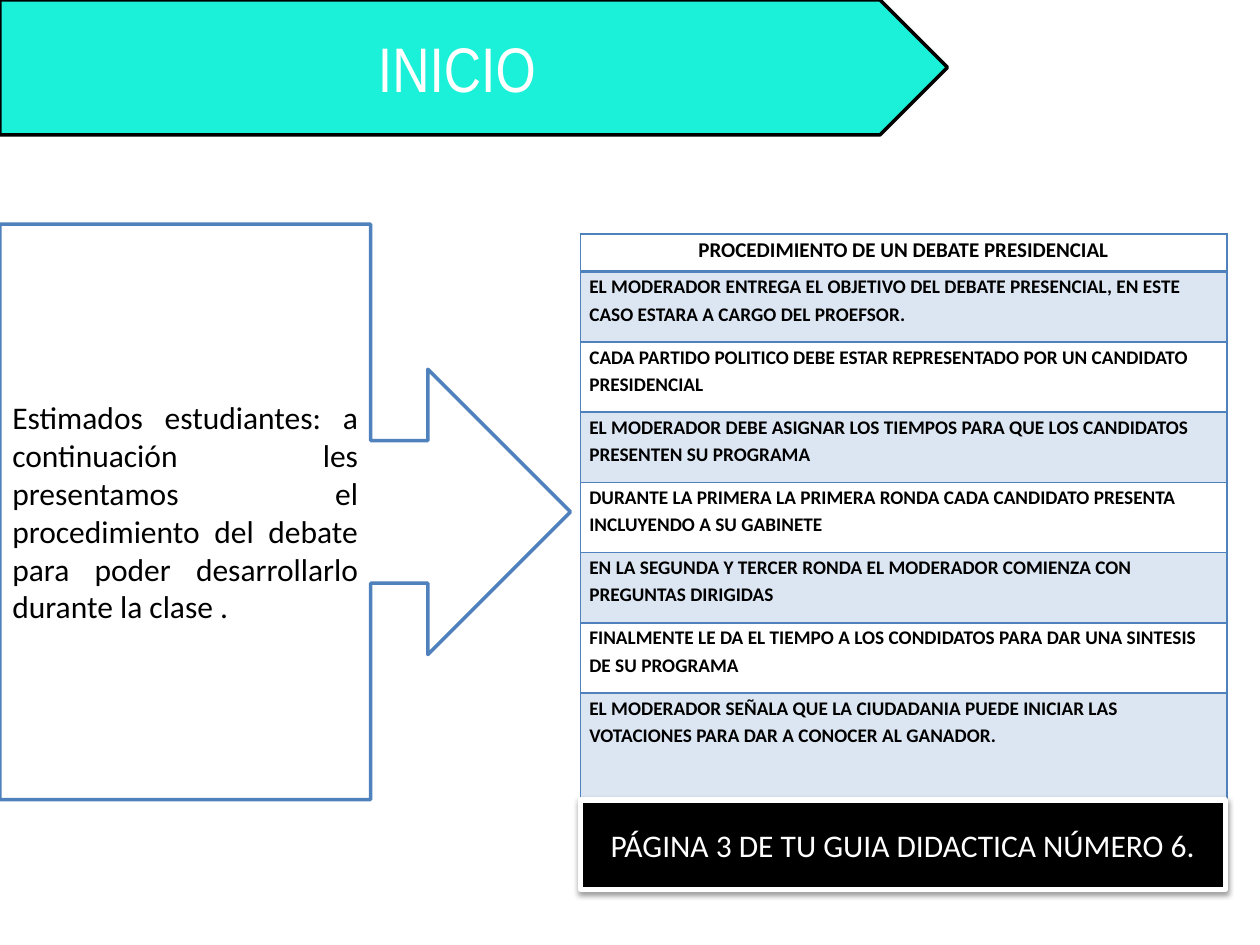
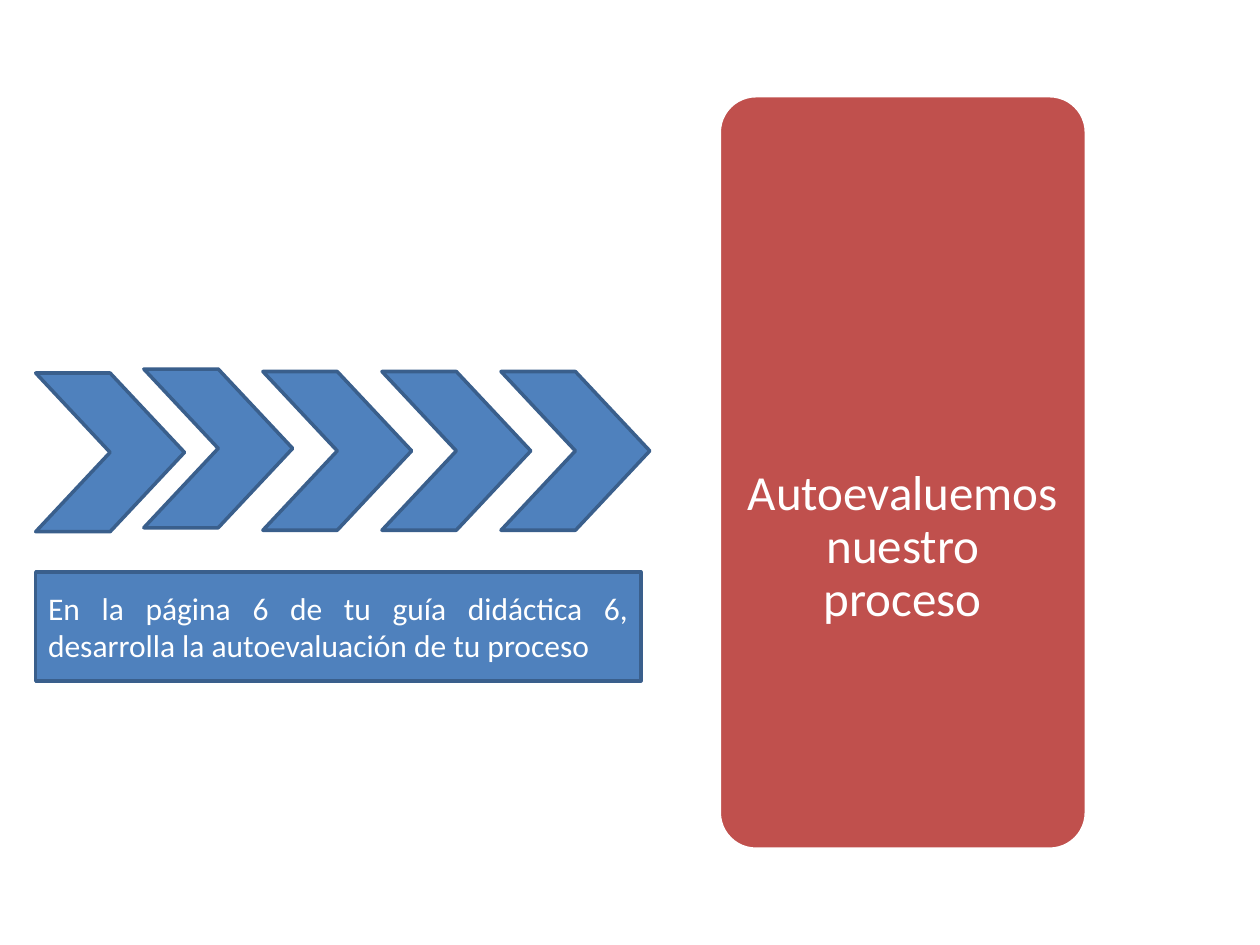
from lxml import etree
from pptx import Presentation
from pptx import util as u
from pptx.dml.color import RGBColor
from pptx.enum import shapes, text
from pptx.oxml import ns

BLACK = RGBColor(0x00, 0x00, 0x00)
WHITE = RGBColor(0xFF, 0xFF, 0xFF)
TURQUOISE = RGBColor(0x1B, 0xF1, 0xD8)
BLUE = RGBColor(0x4F, 0x81, 0xBD)
DARK_BLUE = RGBColor(0x3A, 0x5F, 0x8C)
PALE_BLUE = RGBColor(0xDC, 0xE6, 0xF2)
RED = RGBColor(0xC0, 0x50, 0x4D)
KIND = shapes.MSO_SHAPE
ALIGN = text.PP_ALIGN


def add_box(s, kind, x, y, w, h, fill, line, width=2):
    sp = s.shapes.add_shape(kind, u.Cm(x), u.Cm(y), u.Cm(w), u.Cm(h))
    sp.shadow.inherit = False
    sp.fill.solid()
    sp.fill.fore_color.rgb = fill
    sp.line.color.rgb = line
    sp.line.width = u.Pt(width)
    return sp


def write(tf, words, size, color, align, font="Calibri", bold=False):
    tf.word_wrap = True
    tf.vertical_anchor = text.MSO_ANCHOR.MIDDLE
    tf.text = words
    p = tf.paragraphs[0]
    p.alignment = align
    p.font.name = font
    p.font.size = u.Pt(size)
    p.font.bold = bold
    p.font.color.rgb = color
    return p


prs = Presentation()
prs.slide_width, prs.slide_height = u.Cm(25.4), u.Cm(19.05)
title_only = prs.slide_layouts[5]

titles = [
    ("INICIO", 36, "Arial Narrow", (0, 0, 18.42, 2.72), 0.25,
     KIND.PENTAGON, (0, 0, 19.1, 2.72), TURQUOISE, BLACK),
    ("Autoevaluemos nuestro proceso", 28, "Calibri", (14.5, 8, 7.4, 6.07), 0.56,
     KIND.ROUNDED_RECTANGLE, (14.5, 1.93, 7.4, 15.19), RED, WHITE),
]
for words, size, font, place, inset, kind, band_place, fill, line in titles:
    s = prs.slides.add_slide(title_only)
    title = s.shapes.title
    title.left, title.top, title.width, title.height = [u.Cm(v) for v in place]
    tf = title.text_frame
    tf.auto_size = text.MSO_AUTO_SIZE.NONE
    tf.margin_left = tf.margin_right = u.Cm(inset)
    p = write(tf, words, size, WHITE, ALIGN.CENTER, font)
    p.line_spacing = 0.9 if kind == KIND.ROUNDED_RECTANGLE else 1.0
    band = add_box(s, kind, *band_place, fill, line)
    if kind == KIND.ROUNDED_RECTANGLE:
        band.adjustments[0] = 0.1
    title.element.addprevious(band.element)

start, closing = prs.slides

callout = add_box(start, KIND.RIGHT_ARROW_CALLOUT, 0, 4.52, 11.5, 11.6, WHITE, BLUE)
write(callout.text_frame,
      "Estimados estudiantes: a continuación les presentamos el procedimiento "
      "del debate para poder desarrollarlo durante la clase .",
      18, BLACK, ALIGN.JUSTIFY)

steps = [
    "PROCEDIMIENTO DE UN DEBATE PRESIDENCIAL",
    "EL MODERADOR ENTREGA EL OBJETIVO DEL DEBATE PRESENCIAL, EN ESTE CASO ESTARA A CARGO DEL PROEFSOR.",
    "CADA PARTIDO POLITICO DEBE ESTAR REPRESENTADO POR UN CANDIDATO PRESIDENCIAL",
    "EL MODERADOR DEBE ASIGNAR LOS TIEMPOS PARA QUE LOS CANDIDATOS PRESENTEN SU PROGRAMA",
    "DURANTE LA PRIMERA LA PRIMERA RONDA CADA CANDIDATO PRESENTA INCLUYENDO A SU GABINETE",
    "EN LA SEGUNDA Y TERCER RONDA EL MODERADOR COMIENZA CON PREGUNTAS DIRIGIDAS",
    "FINALMENTE LE DA EL TIEMPO A LOS CONDIDATOS PARA DAR UNA SINTESIS DE SU PROGRAMA",
    "EL MODERADOR SEÑALA QUE LA CIUDADANIA PUEDE INICIAR LAS VOTACIONES PARA DAR A CONOCER AL GANADOR.",
]
heights = [0.76] + [1.415] * 6 + [2.18]
frame = start.shapes.add_table(len(steps), 1, u.Cm(11.7), u.Cm(4.72),
                               u.Cm(13.03), u.Cm(sum(heights)))
table = frame.table
table.first_row = table.horz_banding = False
for i, (step, height) in enumerate(zip(steps, heights)):
    table.rows[i].height = u.Cm(height)
    cell = table.cell(i, 0)
    cell.margin_left = cell.margin_right = u.Cm(0.18)
    cell.margin_top = cell.margin_bottom = 0
    p = write(cell.text_frame, step, 11 if i else 12, BLACK,
              ALIGN.LEFT if i else ALIGN.CENTER, bold=True)
    cell.vertical_anchor = text.MSO_ANCHOR.TOP
    p.line_spacing = 1.15
    p.space_after = u.Pt(10)
    tcPr = cell._tc.get_or_add_tcPr()
    for side in "LRTB":
        thick = (i, side) in [(0, "B"), (1, "T")]
        ln = etree.SubElement(tcPr, ns.qn("a:ln" + side), w=str(u.Pt(2 if thick else 1)))
        solid = etree.SubElement(ln, ns.qn("a:solidFill"))
        etree.SubElement(solid, ns.qn("a:srgbClr"), val=str(BLUE))
    if i % 2:
        cell.fill.solid()
        cell.fill.fore_color.rgb = PALE_BLUE
    else:
        cell.fill.background()

page = add_box(start, KIND.RECTANGLE, 11.7, 16.13, 13, 1.8, BLACK, WHITE, 3)
write(page.text_frame, "PÁGINA 3 DE TU GUIA DIDACTICA NÚMERO 6.", 18, WHITE, ALIGN.CENTER)
effects = page.element.spPr.find(ns.qn("a:effectLst"))
shadow = etree.SubElement(effects, ns.qn("a:outerShdw"), blurRad=str(u.Pt(3.1)),
                          dist=str(u.Pt(1.6)), dir="5400000", rotWithShape="0")
tint = etree.SubElement(shadow, ns.qn("a:srgbClr"), val=str(BLACK))
etree.SubElement(tint, ns.qn("a:alpha"), val="38000")

chevrons = [(0.72, 7.52), (2.9, 7.44)] + [(5.3 + 2.4 * i, 7.49) for i in range(3)]
for x, y in chevrons:
    add_box(closing, KIND.CHEVRON, x, y, 3, 3.2, BLUE, DARK_BLUE)

task = add_box(closing, KIND.RECTANGLE, 0.72, 11.53, 12.2, 2.2, BLUE, DARK_BLUE)
write(task.text_frame,
      "En la página 6 de tu guía didáctica 6, desarrolla la autoevaluación de tu proceso",
      18, WHITE, ALIGN.JUSTIFY)

prs.save("out.pptx")
